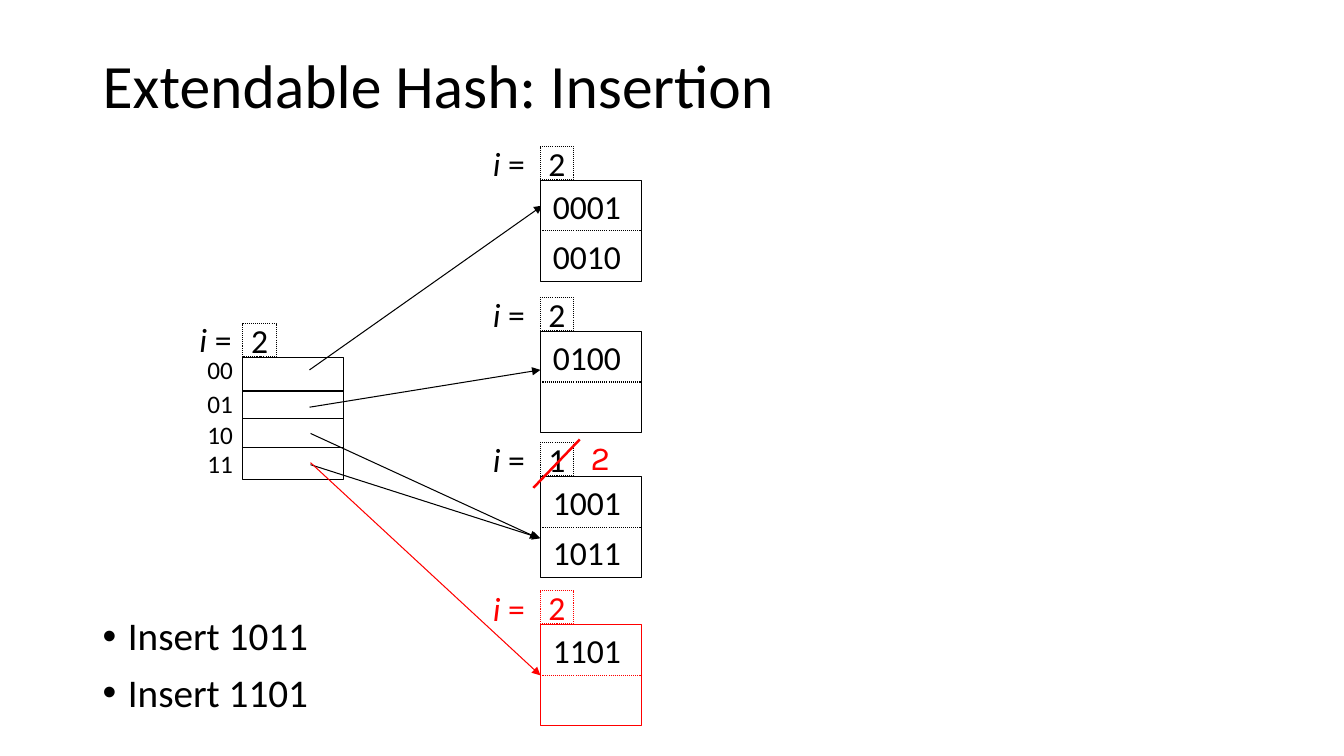
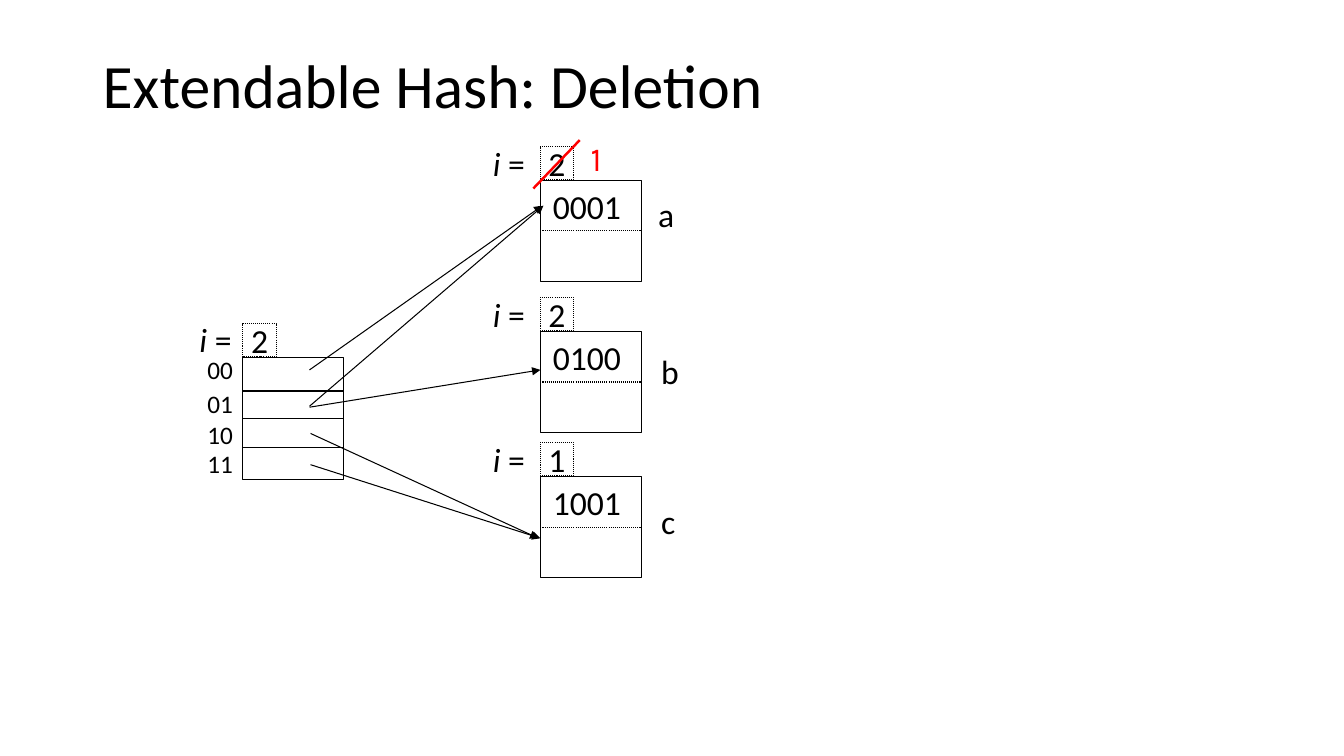
from lxml.etree import SubElement
from pptx import Presentation
from pptx.dml.color import RGBColor
from pptx.enum.dml import MSO_LINE
from pptx.enum.shapes import MSO_CONNECTOR, MSO_SHAPE
from pptx.enum.text import MSO_ANCHOR, MSO_AUTO_SIZE, PP_ALIGN
from pptx.oxml.ns import qn
from pptx.util import Inches, Pt

BLACK, WHITE, RED = "000000", "FFFFFF", "FF0000"
LEFT, RIGHT = 1, 3
DIR_X, BUCKET_X, CELL = 2.41, 5.36, 0.33
BUCKET_TOPS = [1.79, 3.29, 4.73, 6.2]
ROW_LABELS = {"00": 3.47, "01": 3.8, "10": 4.11, "11": 4.4}
POINTERS = [
    ((3.07, 3.67), (5.38, 2.04)),
    ((3.07, 4.04), (5.36, 3.67)),
    ((3.08, 4.3), (5.34, 5.34)),
    ((3.08, 4.61), (5.36, 5.34)),
]


def rgb(color):
    """Turn a hex string into a colour."""
    return RGBColor.from_string(color)


class HashDeck:
    """Draws extendable hash diagrams in one style on the current slide."""

    font = "Calibri"

    def __init__(self):
        """Start an empty widescreen presentation."""
        self.prs = Presentation()
        self.prs.slide_width, self.prs.slide_height = Inches(13.33), Inches(7.5)
        self.shapes = None

    def run(self, p, text, size=24, color=BLACK, italic=False, font=None):
        """Add one styled run to a paragraph."""
        r = p.add_run()
        r.text = text
        r.font.name, r.font.size = font or self.font, Pt(size)
        r.font.italic, r.font.color.rgb = italic, rgb(color)

    def frame(self, x, y, w, h, wrap=False, anchor=MSO_ANCHOR.TOP):
        """Add a text box and return its text frame."""
        tf = self.shapes.add_textbox(Inches(x), Inches(y), Inches(w), Inches(h)).text_frame
        tf.word_wrap, tf.vertical_anchor = wrap, anchor
        tf.auto_size = MSO_AUTO_SIZE.NONE if wrap else MSO_AUTO_SIZE.SHAPE_TO_FIT_TEXT
        return tf

    def label(self, text, x, y, w, h=0.5, **style):
        """Add a short one-line label."""
        self.run(self.frame(x, y, w, h).paragraphs[0], text, **style)

    def title(self, text):
        """Add a blank slide with a title."""
        self.shapes = self.prs.slides.add_slide(self.prs.slide_layouts[6]).shapes
        p = self.frame(0.92, 0.33, 11.5, 1.09, True, MSO_ANCHOR.MIDDLE).paragraphs[0]
        p.line_spacing = 0.9
        self.run(p, text, size=44)

    def bullets(self, items, y):
        """Add a bulleted list."""
        tf = self.frame(0.92, y, 11.5, 1.2, True)
        for i, item in enumerate(items):
            p = tf.add_paragraph() if i else tf.paragraphs[0]
            p.line_spacing, p.space_after = 0.9, Pt(10)
            pPr = p._p.get_or_add_pPr()
            pPr.set("marL", str(Inches(0.25)))
            pPr.set("indent", str(Inches(-0.25)))
            SubElement(pPr, qn("a:buFont")).set("typeface", "Arial")
            SubElement(pPr, qn("a:buChar")).set("char", "•")
            self.run(p, item, size=28)

    def rect(self, x, y, w, h, color=BLACK, dotted=False):
        """Add a white outlined rectangle."""
        sp = self.shapes.add_shape(
            MSO_SHAPE.RECTANGLE, Inches(x), Inches(y), Inches(w), Inches(h))
        sp.shadow.inherit = False
        sp.fill.solid()
        sp.fill.fore_color.rgb = rgb(WHITE)
        sp.line.color.rgb, sp.line.width = rgb(color), Pt(0.75)
        if dotted:
            sp.line.dash_style = MSO_LINE.ROUND_DOT
        return sp

    def line(self, start, end, color=BLACK, width=0.75, dotted=False, arrow=False,
             begin_at=None, end_at=None):
        """Add a straight line, joined to rectangle sides where given."""
        sp = self.shapes.add_connector(
            MSO_CONNECTOR.STRAIGHT, *(Inches(v) for v in (*start, *end)))
        if begin_at:
            sp.begin_connect(begin_at, LEFT)
        if end_at:
            sp.end_connect(end_at, LEFT if arrow else RIGHT)
        sp.line.color.rgb, sp.line.width = rgb(color), Pt(width)
        if dotted:
            sp.line.dash_style = MSO_LINE.ROUND_DOT
        spPr = sp.element.spPr
        if arrow:
            SubElement(spPr.find(qn("a:ln")), qn("a:tailEnd")).set("type", "triangle")
        SubElement(spPr, qn("a:effectLst"))

    def counter(self, value, x, y, label_x, label_y, color=BLACK):
        """Add the depth "i =" and its dotted cell."""
        tf = self.rect(x, y, CELL, CELL, color, dotted=True).text_frame
        tf.word_wrap, tf.vertical_anchor = False, MSO_ANCHOR.MIDDLE
        tf.paragraphs[0].alignment = PP_ALIGN.CENTER
        self.run(tf.paragraphs[0], value, color=color)
        p = self.frame(label_x, label_y, 0.52, 0.5).paragraphs[0]
        self.run(p, "i", color=color, italic=True)
        self.run(p, " =", color=color)

    def directory(self):
        """Add the directory with its four rows."""
        sp = self.rect(DIR_X, 3.55, 1, 1.21)
        self.counter("2", DIR_X, 3.21, 1.88, 3.11)
        for text, y in ROW_LABELS.items():
            self.label(text, 1.96, y, 0.46, 0.4, size=18)
        for y in (3.88, 4.44):
            self.line((2.4, y), (3.4, y), width=1)
        self.line((DIR_X, 4.15), (DIR_X + 1, 4.15), width=1, begin_at=sp, end_at=sp)

    def bucket(self, top, depth, keys, color=BLACK):
        """Add a two-slot bucket with its depth and keys."""
        sp = self.rect(BUCKET_X, top, 1, 1, color)
        self.counter(depth, BUCKET_X, top - 0.34, 4.79, top - 0.42, color)
        middle = top + 0.5
        self.line((BUCKET_X, middle), (BUCKET_X + 1, middle), color, dotted=True,
                  begin_at=sp, end_at=sp)
        for i, key in enumerate(keys):
            tf = self.frame(5.38, top + 0.5 * i, 0.88, 0.5, anchor=MSO_ANCHOR.MIDDLE)
            tf.paragraphs[0].alignment = PP_ALIGN.CENTER
            self.run(tf.paragraphs[0], key)
        return sp

    def pointer(self, start, end, color=BLACK, end_at=None):
        """Add an arrow from a directory row to a bucket."""
        self.line(start, end, color, arrow=True, end_at=end_at)

    def new_depth(self, value, y):
        """Strike out a depth and write the new one beside it."""
        self.label(value, 5.76, y, 0.39, color=RED, font="Karla")
        self.line((5.29, y + 0.55), (5.75, y + 0.07), RED, 1.75)

    def diagram(self, title, buckets):
        """Add a slide with the directory, three buckets and their pointers."""
        self.title(title)
        self.directory()
        self.pointer(*POINTERS[0])
        for top, (depth, keys) in zip(BUCKET_TOPS, buckets):
            self.bucket(top, depth, keys)
        for start, end in POINTERS[1:]:
            self.pointer(start, end)


def main():
    """Build both slides and save them."""
    deck = HashDeck()

    deck.diagram("Extendable Hash: Insertion", [
        ("2", ["0001", "0010"]), ("2", ["0100"]), ("1", ["1001", "1011"])])
    deck.bullets(["Insert 1011", "Insert 1101"], 6.07)
    sp = deck.bucket(BUCKET_TOPS[3], "2", ["1101"], RED)
    deck.pointer((3.08, 4.59), (BUCKET_X, 6.7), RED, end_at=sp)
    deck.new_depth("2", 4.29)

    deck.diagram("Extendable Hash: Deletion", [
        ("2", ["0001"]), ("2", ["0100"]), ("1", ["1001"])])
    deck.pointer((3.07, 4.03), (5.39, 2.04))
    for name, x, y in (("a", 6.43, 1.87), ("b", 6.46, 3.43), ("c", 6.46, 4.92)):
        deck.label(name, x, y, 0.38)
    deck.new_depth("1", 1.32)

    deck.prs.save("out.pptx")


if __name__ == "__main__":
    main()
